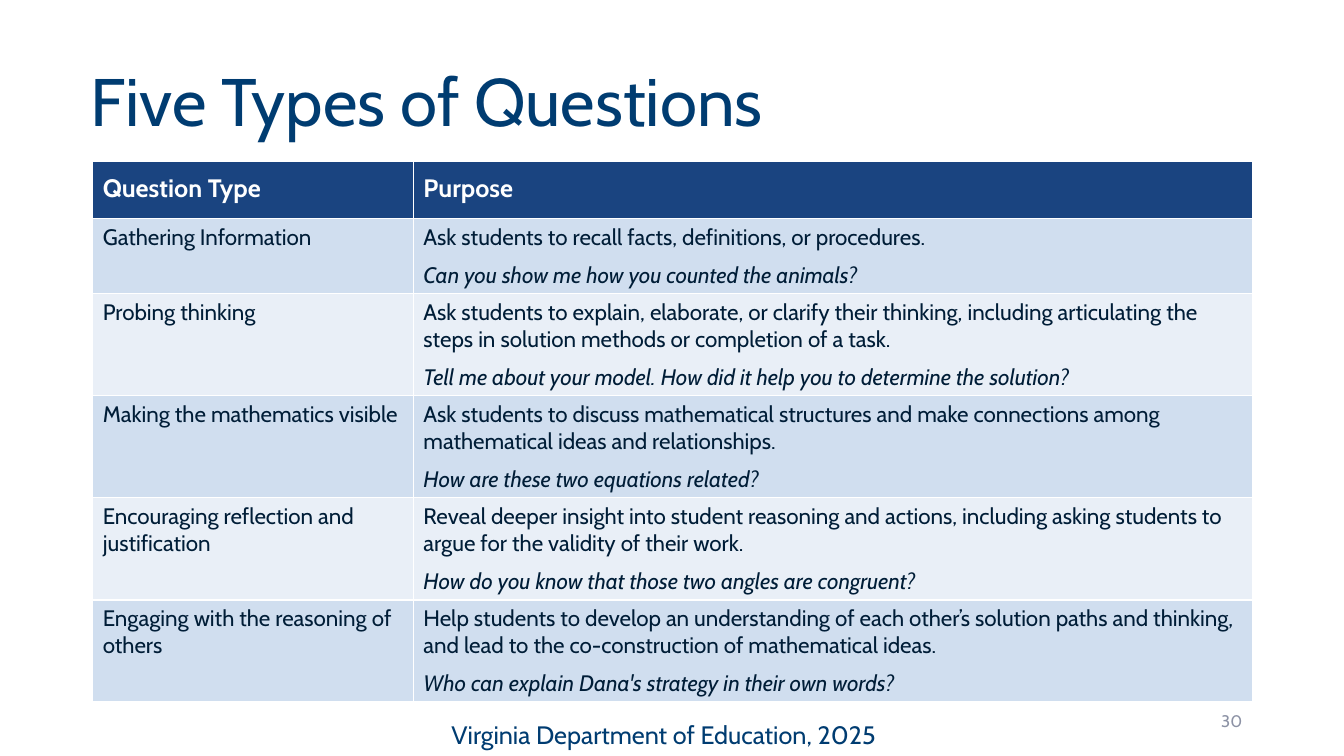
"""Build the slide that lists five types of classroom questions."""
from dataclasses import dataclass
from typing import Any

import lxml.etree
import pptx
import pptx.dml.color
import pptx.enum.text
import pptx.oxml.ns
import pptx.util

Inches = pptx.util.Inches
Pt = pptx.util.Pt
Align = pptx.enum.text.PP_ALIGN
Anchor = pptx.enum.text.MSO_ANCHOR

FONT = "Cabin"
NAVY = "003C71"
INK = "001D37"
WHITE = "FFFFFF"
HEADER_FILL = "1A4480"
BAND_FILLS = ("D0DEEF", "E9EFF7")
TABLE_BOX = (0.92, 1.6, 11.5, 5.35)
COLUMN_WIDTHS = (3.18, 8.32)
HEADERS = ("Question Type", "Purpose")
BORDER_SIDES = ("lnL", "lnR", "lnT", "lnB")
BORDER_POINTS = 0.95
EXAMPLE_SPACING = Pt(27)


@dataclass(frozen=True)
class Label:
    """A standalone line of text on the slide."""
    text: str
    box: tuple[float, float, float, float]
    size: float
    color: str
    paragraph_format: dict[str, Any]
    frame_format: dict[str, Any]


@dataclass(frozen=True)
class QuestionType:
    """A question type with its purpose, example and row height."""
    name: str
    purpose: str
    example: str
    height: float


LABELS = (
    Label("Five Types of Questions", (0, 0, 13.33, 1.45), 48, NAVY,
          {"line_spacing": 0.9},
          {"vertical_anchor": Anchor.BOTTOM, "margin_left": Inches(0.9)}),
    Label("30", (9.42, 6.95, 3, 0.4), 12, "8C92A5",
          {"alignment": Align.RIGHT}, {"vertical_anchor": Anchor.MIDDLE}),
    Label("Virginia Department of Education, 2025", (4.38, 7.09, 4.57, 0.4),
          18, NAVY, {}, {}),
)

QUESTION_TYPES = (
    QuestionType(
        "Gathering Information",
        "Ask students to recall facts, definitions, or procedures.",
        "Can you show me how you counted the animals?", 0.74),
    QuestionType(
        "Probing thinking",
        "Ask students to explain, elaborate, or clarify their thinking, including "
        "articulating the steps in solution methods or completion of a task.",
        "Tell me about your model. How did it help you to determine the solution?",
        1.01),
    QuestionType(
        "Making the mathematics visible",
        "Ask students to discuss mathematical structures and make connections "
        "among mathematical ideas and relationships.",
        "How are these two equations related?", 1.01),
    QuestionType(
        "Encouraging reflection and justification",
        "Reveal deeper insight into student reasoning and actions, including "
        "asking students to argue for the validity of their work.",
        "How do you know that those two angles are congruent?", 1.01),
    QuestionType(
        "Engaging with the reasoning of others",
        "Help students to develop an understanding of each other’s solution paths "
        "and thinking, and lead to the co-construction of mathematical ideas.",
        "Who can explain Dana's strategy in their own words?", 1.01),
)


def rgb(color: str) -> pptx.dml.color.RGBColor:
    """Return the colour for a hex string."""
    return pptx.dml.color.RGBColor.from_string(color)


def apply_format(target: Any, values: dict[str, Any]) -> None:
    """Set each attribute in the format values."""
    for name, value in values.items():
        setattr(target, name, value)


def write_paragraph(paragraph: Any, text: str, size: float, color: str,
                    paragraph_format: dict[str, Any], **font_format: Any) -> None:
    """Fill a paragraph with one formatted run."""
    apply_format(paragraph, paragraph_format)
    run = paragraph.add_run()
    run.text = text
    apply_format(run.font, {"name": FONT, "size": Pt(size), **font_format})
    run.font.color.rgb = rgb(color)


def add_label(slide: Any, label: Label) -> None:
    """Add a text box for a label."""
    shape = slide.shapes.add_textbox(*map(Inches, label.box))
    frame = shape.text_frame
    apply_format(frame, {"word_wrap": True, **label.frame_format})
    write_paragraph(frame.paragraphs[0], label.text, label.size, label.color,
                    label.paragraph_format)


def style_cell(cell: Any, fill: str) -> None:
    """Give a cell its white borders and its fill."""
    qualified = pptx.oxml.ns.qn
    properties = cell._tc.get_or_add_tcPr()
    for side in BORDER_SIDES:
        line = lxml.etree.SubElement(properties, qualified(f"a:{side}"),
                                     w=str(int(Pt(BORDER_POINTS))))
        solid = lxml.etree.SubElement(line, qualified("a:solidFill"))
        lxml.etree.SubElement(solid, qualified("a:srgbClr"), val=WHITE)
    cell.fill.solid()
    cell.fill.fore_color.rgb = rgb(fill)


def add_question_table(slide: Any) -> None:
    """Add the table of question types and purposes."""
    table = slide.shapes.add_table(len(QUESTION_TYPES) + 1, len(HEADERS),
                                   *map(Inches, TABLE_BOX)).table
    for column, width in zip(table.columns, COLUMN_WIDTHS):
        column.width = Inches(width)
    table.rows[0].height = Inches(0.57)
    for cell, header in zip(table.rows[0].cells, HEADERS):
        style_cell(cell, HEADER_FILL)
        write_paragraph(cell.text_frame.paragraphs[0], header, 18, WHITE,
                        {"line_spacing": EXAMPLE_SPACING}, bold=True)
    for index, question in enumerate(QUESTION_TYPES):
        row = table.rows[index + 1]
        row.height = Inches(question.height)
        for cell, text in zip(row.cells, (question.name, question.purpose)):
            style_cell(cell, BAND_FILLS[index % 2])
            write_paragraph(cell.text_frame.paragraphs[0], text, 16, INK, {},
                            bold=False)
        write_paragraph(row.cells[1].text_frame.add_paragraph(), question.example,
                        16, INK, {"line_spacing": EXAMPLE_SPACING},
                        bold=False, italic=True)


def main() -> None:
    """Create and save the presentation."""
    presentation = pptx.Presentation()
    apply_format(presentation, {"slide_width": Inches(13.33),
                                "slide_height": Inches(7.5)})
    slide = presentation.slides.add_slide(presentation.slide_layouts[6])
    add_question_table(slide)
    for label in LABELS:
        add_label(slide, label)
    presentation.save("out.pptx")


if __name__ == "__main__":
    main()
